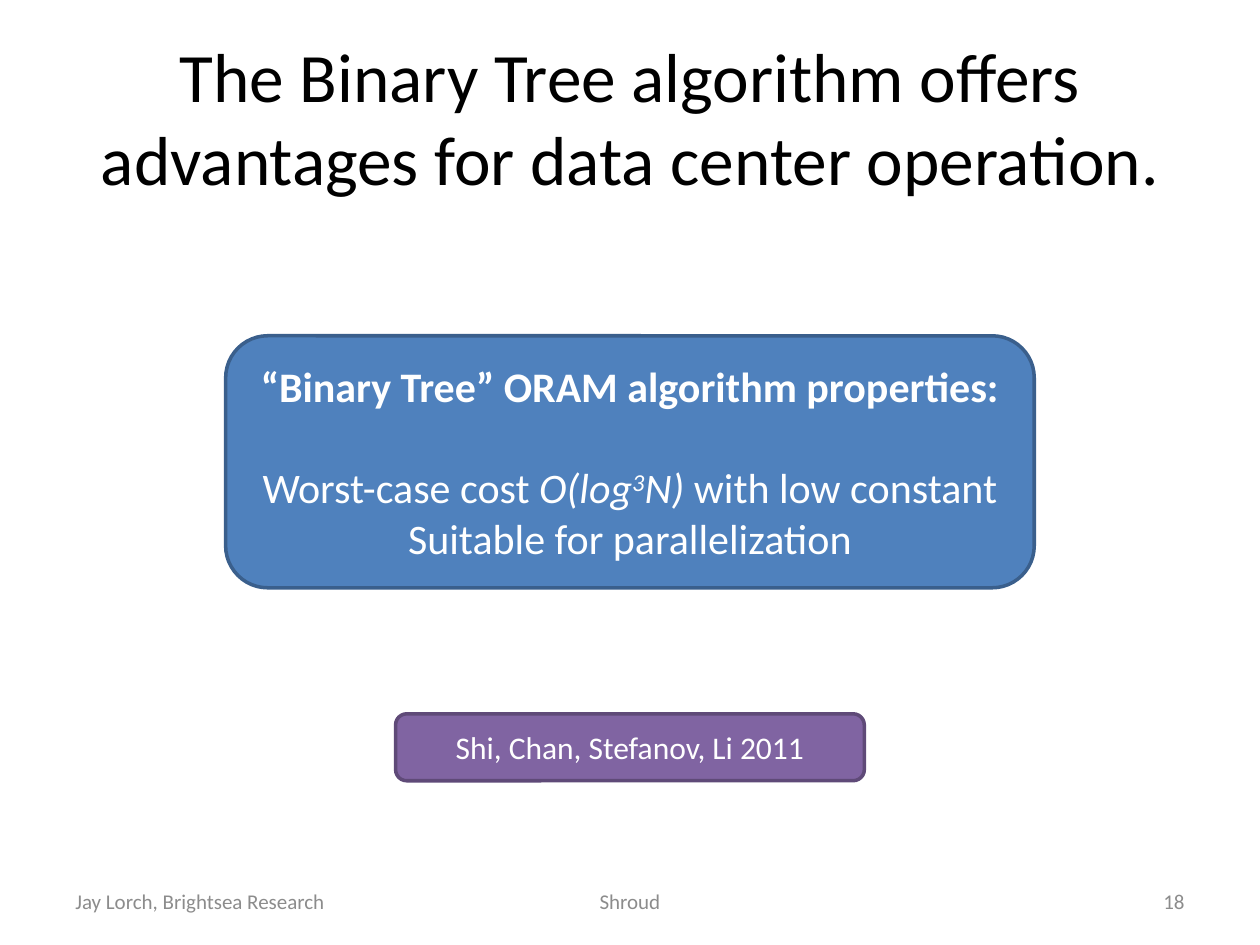
"""Build the slide on the advantages of the Binary Tree algorithm."""
from pptx import Presentation
from pptx.dml.color import RGBColor
from pptx.enum.shapes import MSO_SHAPE
from pptx.enum.text import MSO_ANCHOR, PP_ALIGN
from pptx.util import Cm, Pt

ROUNDED = MSO_SHAPE.ROUNDED_RECTANGLE
MIDDLE = MSO_ANCHOR.MIDDLE
LEFT, CENTER, RIGHT = PP_ALIGN.LEFT, PP_ALIGN.CENTER, PP_ALIGN.RIGHT

FONT = "Calibri"
COLORS = {
    "title": "000000", "footer": "8C8C8C", "light": "FFFFFF",
    "blue": "4F81BD", "blue_line": "3A5F8C",
    "purple": "8064A2", "purple_line": "5F4A78",
}
PAGE_WIDTH, PAGE_HEIGHT, MARGIN = 25.4, 19.05, 1.27

TITLE = "The Binary Tree algorithm offers advantages for data center operation."
FOOTERS = [
    ("Jay Lorch, Brightsea Research", 5.92, LEFT),
    ("Shroud", 8.05, CENTER),
    ("18", 5.92, RIGHT),
]
PROPERTIES = [
    [("“Binary Tree” ORAM algorithm properties:", "bold")],
    [("Worst-case cost ", ""), ("O(log", "italic"), ("3", "italic super"),
     ("N) ", "italic"), ("with low constant", "")],
    [("Suitable for parallelization", "")],
]
CITATION = [[("Shi, Chan, Stefanov, Li 2011", "")]]


def color(name):
    return RGBColor.from_string(COLORS[name])


def write(box, lines, size, ink, align=CENTER):
    frame = box.text_frame
    frame.word_wrap = True
    frame.vertical_anchor = MIDDLE
    for index, line in enumerate(lines):
        para = frame.add_paragraph() if index else frame.paragraphs[0]
        para.alignment = align
        for text, style in line:
            span = para.add_run()
            span.text = text
            span.font.name = FONT
            span.font.size = Pt(size)
            span.font.color.rgb = color(ink)
            span.font.bold = "bold" in style
            span.font.italic = "italic" in style
            if "super" in style:
                span._r.get_or_add_rPr().set("baseline", "30000")


def add_text(page, text, left, top, width, height, size, ink, align):
    box = page.shapes.add_textbox(Cm(left), Cm(top), Cm(width), Cm(height))
    write(box, [[(text, "")]], size, ink, align)


def add_panel(page, lines, top, width, height, size, fill):
    left = (PAGE_WIDTH - width) / 2
    panel = page.shapes.add_shape(ROUNDED, Cm(left), Cm(top), Cm(width), Cm(height))
    panel.shadow.inherit = False
    panel.fill.solid()
    panel.fill.fore_color.rgb = color(fill)
    panel.line.color.rgb = color(fill + "_line")
    panel.line.width = Pt(2)
    write(panel, lines, size, "light")
    return panel


def main():
    deck = Presentation()
    deck.slide_width, deck.slide_height = Cm(PAGE_WIDTH), Cm(PAGE_HEIGHT)
    page = deck.slides.add_slide(deck.slide_layouts[6])

    content_width = PAGE_WIDTH - 2 * MARGIN
    add_text(page, TITLE, MARGIN, 0.76, content_width, 3.18, 39.6, "title", CENTER)

    gap = (content_width - sum(width for _, width, _ in FOOTERS)) / (len(FOOTERS) - 1)
    left = MARGIN
    for text, width, align in FOOTERS:
        add_text(page, text, left, 17.65, width, 1.02, 12, "footer", align)
        left += width + gap

    panel = add_panel(page, PROPERTIES, 6.77, 16.3, 5.08, 24, "blue")
    panel.text_frame.paragraphs[0].space_after = Pt(29)
    add_panel(page, CITATION, 14.39, 9.45, 1.35, 18, "purple")

    deck.save("out.pptx")


if __name__ == "__main__":
    main()
